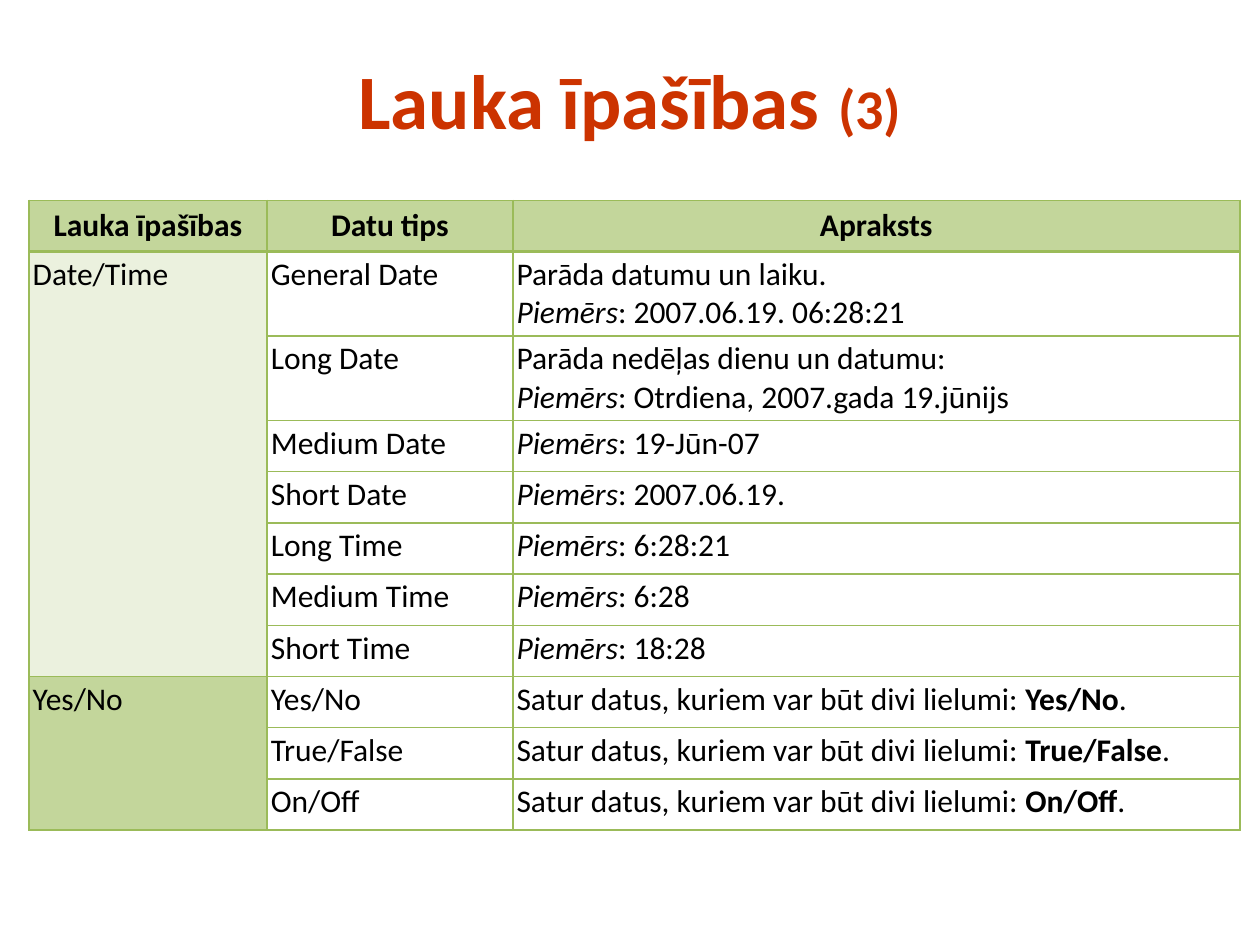
from pptx import Presentation, util as u
from pptx.dml.color import RGBColor
from pptx.enum import text
from pptx.oxml import parse_xml
from pptx.oxml.ns import nsdecls


def write(para, words, size, color="000000", style=""):
    """Add one run; style holds "b" for bold and "i" for italic."""
    run = para.add_run()
    run.text = words
    font = run.font
    font.name, font.size = "Calibri", u.Pt(size)
    font.bold, font.italic = "b" in style, "i" in style
    font.color.rgb = RGBColor.from_string(color)


def edge(cell, side, width):
    cell._tc.get_or_add_tcPr().append(parse_xml(
        f'<a:ln{side} {nsdecls("a")} w="{u.Pt(width)}"><a:solidFill>'
        f'<a:srgbClr val="9BBB59"/></a:solidFill></a:ln{side}>'))


prs = Presentation()
prs.slide_width, prs.slide_height = u.Inches(10), u.Inches(7.5)
slide = prs.slides.add_slide(prs.slide_layouts[5])

title = slide.shapes.title
title.left, title.top = u.Inches(0.5), u.Inches(0.16)
title.width, title.height = u.Inches(9), u.Inches(1.25)
title.text_frame.vertical_anchor = text.MSO_ANCHOR.MIDDLE
para = title.text_frame.paragraphs[0]
para.alignment = text.PP_ALIGN.CENTER
write(para, "Lauka īpašības ", 44, "CC3300", "b")
write(para, "(3)", 32, "CC3300", "b")

# Each row: group, data type, opening line, example
dates = [
    ("Date/Time", "General Date", "Parāda datumu un laiku.", "2007.06.19. 06:28:21"),
    ("", "Long Date", "Parāda nedēļas dienu un datumu:",
     "Otrdiena, 2007.gada 19.jūnijs"),
    ("", "Medium Date", "", "19-Jūn-07"),
    ("", "Short Date", "", "2007.06.19."),
    ("", "Long Time", "", "6:28:21"),
    ("", "Medium Time", "", "6:28"),
    ("", "Short Time", "", "18:28"),
]
flags = ["Yes/No", "True/False", "On/Off"]
heads = ["Lauka īpašības", "Datu tips", "Apraksts"]
first = len(dates) + 1
count = first + len(flags)
step = u.Inches(4.47) // count

table = slide.shapes.add_table(count, 3, u.Inches(0.23), u.Inches(1.59),
                               u.Inches(9.61), step * count).table
table.first_row = table.horz_banding = False
for col, width in zip(table.columns, (1.89, 1.95, 5.77)):
    col.width = u.Inches(width)

for r, row in enumerate(table.rows):
    row.height = u.Inches(0.67) if r in (1, 2) else step
    for c, cell in enumerate(row.cells):
        edge(cell, "L", 1)
        edge(cell, "R", 1)
        edge(cell, "T", 2 if r == 1 else 1)
        edge(cell, "B", 2 if r == 0 else 1)
        if r and c:
            cell.fill.background()
        else:
            cell.fill.solid()
            shade = "EBF1DE" if 0 < r < first else "C3D69B"
            cell.fill.fore_color.rgb = RGBColor.from_string(shade)
        if r:
            cell.margin_left = cell.margin_right = u.Inches(0.03)
            cell.margin_top = cell.margin_bottom = u.Inches(0.03)

for c, head in enumerate(heads):
    para = table.cell(0, c).text_frame.paragraphs[0]
    para.alignment = text.PP_ALIGN.CENTER
    write(para, head, 18, style="b")

for r, (group, kind, lead, sample) in enumerate(dates, 1):
    paras = [table.cell(r, c).text_frame.paragraphs[0] for c in range(3)]
    if group:
        write(paras[0], group, 18)
    write(paras[1], kind, 18)
    if lead:
        write(paras[2], lead, 18)
        paras[2].add_line_break()
    write(paras[2], "Piemērs", 18, style="i")
    write(paras[2], ": " + sample, 18)

write(table.cell(first, 0).text_frame.paragraphs[0], "Yes/No", 18)
for r, flag in enumerate(flags, first):
    write(table.cell(r, 1).text_frame.paragraphs[0], flag, 18)
    para = table.cell(r, 2).text_frame.paragraphs[0]
    write(para, "Satur datus, kuriem var būt divi lielumi: ", 18)
    write(para, flag, 18, style="b")
    write(para, ".", 18)

table.cell(1, 0).merge(table.cell(first - 1, 0))
table.cell(first, 0).merge(table.cell(count - 1, 0))

prs.save("out.pptx")
